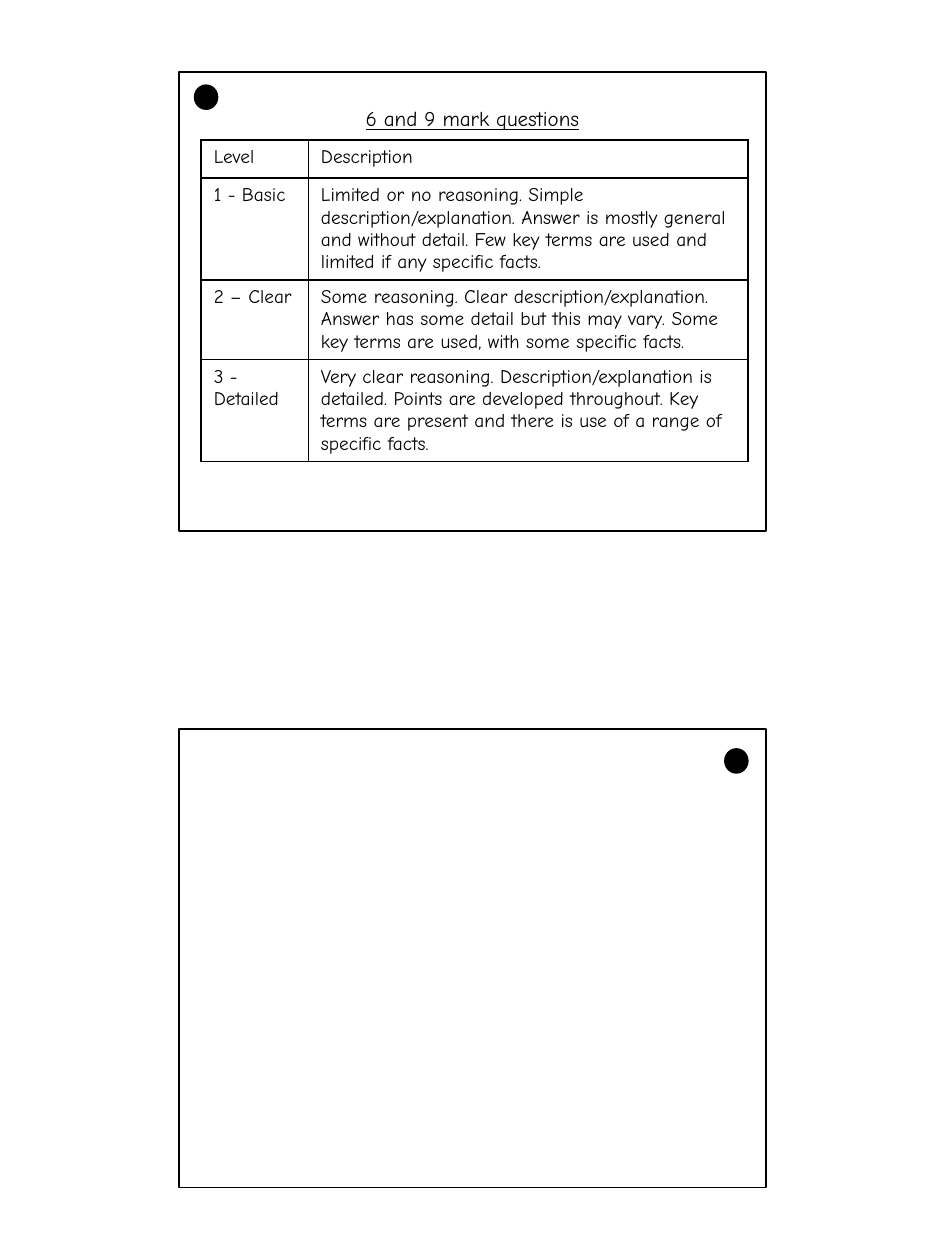
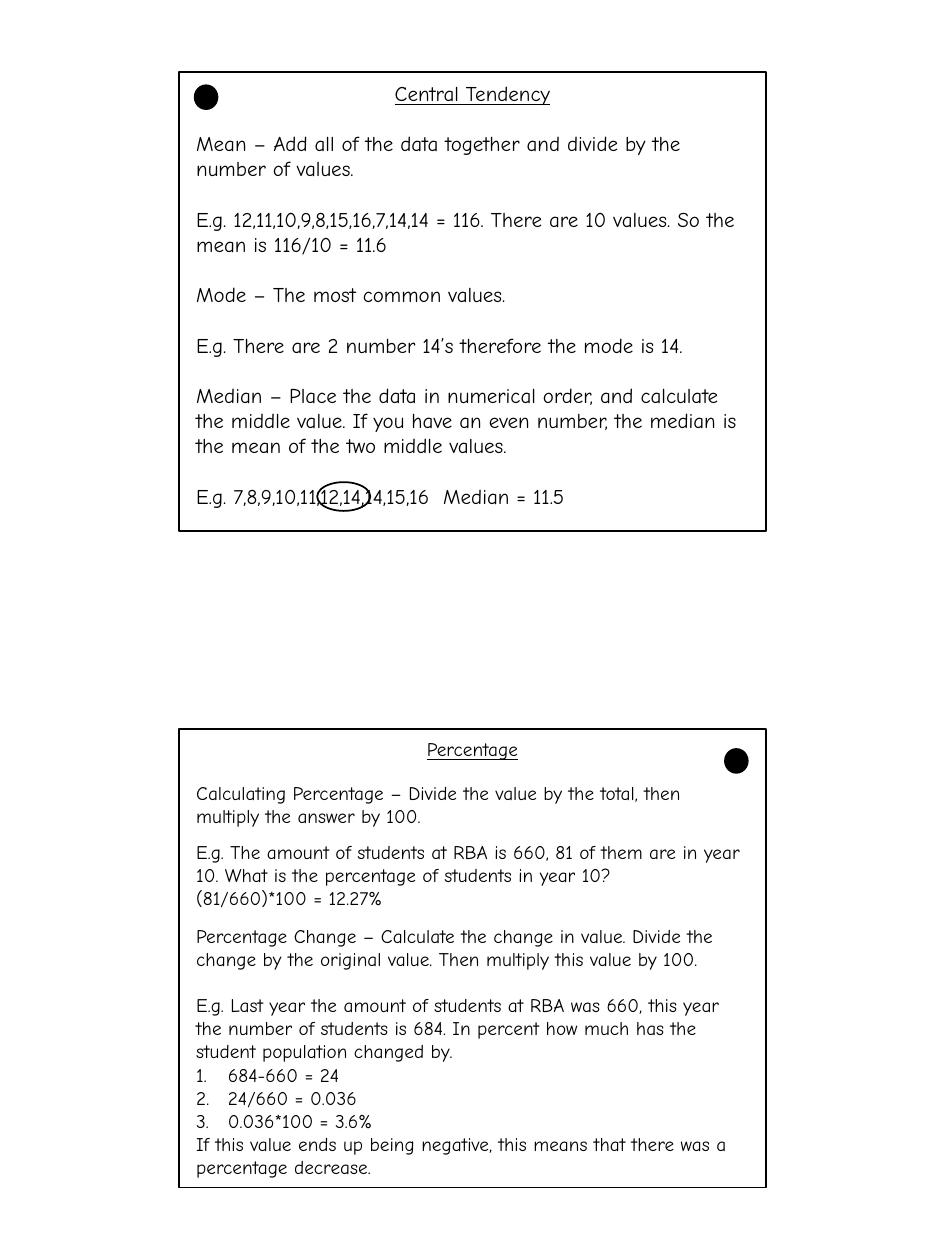
from collections import namedtuple
from dataclasses import dataclass

from lxml.etree import SubElement
from pptx import Presentation
from pptx.dml.color import RGBColor
from pptx.enum.shapes import MSO_SHAPE
from pptx.enum.text import MSO_ANCHOR, MSO_AUTO_SIZE, PP_ALIGN
from pptx.oxml.ns import qn
from pptx.util import Cm, Pt

Box = namedtuple("Box", "left top width height")
Item = namedtuple("Item", "text gap numbered", defaults=(0, False))


@dataclass(frozen=True)
class Theme:
    font: str = "Comic Neue"
    ink: RGBColor = RGBColor(0, 0, 0)
    paper: RGBColor = RGBColor(255, 255, 255)
    line: float = 1
    large: float = 12
    medium: float = 11
    leading: float = 1.2


THEME = Theme()

# Lengths in centimetres
PAGE_WIDTH, PAGE_HEIGHT = 19.05, 25.4
CARD_WIDTH, CARD_HEIGHT = 11.84, 9.25
CARD_LEFT = (PAGE_WIDTH - CARD_WIDTH) / 2
UPPER = Box(CARD_LEFT, 1.45, CARD_WIDTH, CARD_HEIGHT)
LOWER = Box(CARD_LEFT, 14.69, CARD_WIDTH, CARD_HEIGHT)
INSET_X, INSET_Y = 0.35, 0.18
HEADING_HEIGHT = 0.5

LEVELS = [
    ("Level", "Description"),
    ("1 - Basic", "Limited or no reasoning. Simple description/explanation. "
     "Answer is mostly general and without detail. Few key terms are used "
     "and limited if any specific facts."),
    ("2 – Clear", "Some reasoning. Clear description/explanation. Answer has "
     "some detail but this may vary. Some key terms are used, with some "
     "specific facts."),
    ("3 - Detailed", "Very clear reasoning. Description/explanation is "
     "detailed. Points are developed throughout. Key terms are present and "
     "there is use of a range of specific facts."),
]
LEVEL_COLUMNS = (2.16, 8.86)
LEVEL_ROWS = (0.77, 2.05, 1.61, 2.05)

AVERAGES = [
    "Mean – Add all of the data together and divide by the number of values.",
    "E.g. 12,11,10,9,8,15,16,7,14,14 = 116. There are 10 values. So the mean "
    "is 116/10 = 11.6",
    "Mode – The most common values.",
    "E.g. There are 2 number 14’s therefore the mode is 14.",
    "Median – Place the data in numerical order, and calculate the middle "
    "value. If you have an even number, the median is the mean of the two "
    "middle values.",
    "E.g. 7,8,9,10,11,12,14,14,15,16  Median = 11.5",
]

PERCENTAGES = [
    Item("Calculating Percentage – Divide the value by the total, then "
         "multiply the answer by 100."),
    Item("E.g. The amount of students at RBA is 660, 81 of them are in year "
         "10. What is the percentage of students in year 10?", 7.2),
    Item("(81/660)*100 = 12.27%"),
    Item("Percentage Change – Calculate the change in value. Divide the "
         "change by the original value. Then multiply this value by 100.", 8.4),
    Item("E.g. Last year the amount of students at RBA was 660, this year the "
         "number of students is 684. In percent how much has the student "
         "population changed by.", 13.2),
    Item("684-660 = 24", numbered=True),
    Item("24/660 = 0.036", numbered=True),
    Item("0.036*100 = 3.6%", numbered=True),
    Item("If this value ends up being negative, this means that there was a "
         "percentage decrease."),
]


def in_cm(box):
    return [Cm(length) for length in box]


def within(box, left, top, width, height):
    return Box(box.left + left, box.top + top, width, height)


def add_span(para, text, size, underline=False):
    span = para.add_run()
    span.text = text
    font = span.font
    font.name, font.size = THEME.font, Pt(size)
    font.bold, font.underline = False, underline
    font.color.rgb = THEME.ink


def add_outline(page, kind, box, fill=None):
    shape = page.shapes.add_shape(kind, *in_cm(box))
    shape.shadow.inherit = False
    if fill is None:
        shape.fill.background()
    else:
        shape.fill.solid()
        shape.fill.fore_color.rgb = fill
    shape.line.color.rgb = THEME.ink
    shape.line.width = Pt(THEME.line)
    return shape


def place_text_frame(placeholder, box):
    """Move a placeholder to the box, in front of the cards."""
    placeholder.left, placeholder.top, placeholder.width, placeholder.height = in_cm(box)
    element = placeholder.element
    element.getparent().append(element)
    frame = placeholder.text_frame
    frame.word_wrap = True
    frame.auto_size = MSO_AUTO_SIZE.NONE
    frame.vertical_anchor = MSO_ANCHOR.TOP
    frame.margin_left = frame.margin_right = Cm(INSET_X)
    frame.margin_top = frame.margin_bottom = 0
    return frame


def set_para(para, gap=0, numbered=False):
    para.space_before, para.space_after = Pt(gap), Pt(0)
    props = para._p.get_or_add_pPr()
    hang = Cm(0.64) if numbered else 0
    props.set("marL", str(hang))
    props.set("indent", str(-hang))
    if numbered:
        SubElement(props, qn("a:buFont"), typeface="+mj-lt")
        SubElement(props, qn("a:buAutoNum"), type="arabicPeriod")
    else:
        SubElement(props, qn("a:buNone"))


def fill_heading(placeholder, card, text, size, top=INSET_Y):
    box = within(card, 0, top, card.width, HEADING_HEIGHT)
    para = place_text_frame(placeholder, box).paragraphs[0]
    para.alignment = PP_ALIGN.CENTER
    set_para(para)
    add_span(para, text, size, underline=True)


def fill_body(placeholder, card, items, size, top):
    box = within(card, 0, top, card.width, card.height - top)
    frame = place_text_frame(placeholder, box)
    for index, item in enumerate(items):
        para = frame.add_paragraph() if index else frame.paragraphs[0]
        para.alignment = PP_ALIGN.LEFT
        set_para(para, item.gap, item.numbered)
        add_span(para, item.text, size)


def add_cards(page):
    """Two bordered cards, each with a punch hole."""
    for card, left, top in ((UPPER, 0.32, 0.27), (LOWER, 11.01, 0.41)):
        add_outline(page, MSO_SHAPE.RECTANGLE, card, THEME.paper)
        hole = within(card, left, top, 0.46, 0.48)
        add_outline(page, MSO_SHAPE.OVAL, hole, THEME.ink)


def set_borders(cell):
    props = cell._tc.get_or_add_tcPr()
    for position, side in enumerate(("lnL", "lnR", "lnT", "lnB")):
        line = SubElement(props, qn(f"a:{side}"), w=str(Pt(THEME.line)))
        fill = SubElement(line, qn("a:solidFill"))
        SubElement(fill, qn("a:srgbClr"), val=str(THEME.ink))
        props.insert(position, line)


def add_level_table(page, card):
    box = within(card, 0.45, 1.37, sum(LEVEL_COLUMNS), sum(LEVEL_ROWS))
    table = page.shapes.add_table(
        len(LEVELS), len(LEVEL_COLUMNS), *in_cm(box)).table
    table.first_row = table.horz_banding = False
    for column, width in zip(table.columns, LEVEL_COLUMNS):
        column.width = Cm(width)
    for row, height, texts in zip(table.rows, LEVEL_ROWS, LEVELS):
        row.height = Cm(height)
        for cell, text in zip(row.cells, texts):
            cell.fill.solid()
            cell.fill.fore_color.rgb = THEME.paper
            set_borders(cell)
            add_span(cell.text_frame.paragraphs[0], text, THEME.medium)


def build_levels_page(deck):
    page = deck.slides.add_slide(deck.slide_layouts.get_by_name("Title Only"))
    add_cards(page)
    fill_heading(page.shapes.title, UPPER, "6 and 9 mark questions",
                 THEME.large, INSET_Y + HEADING_HEIGHT)
    add_level_table(page, UPPER)


def build_maths_page(deck):
    page = deck.slides.add_slide(deck.slide_layouts.get_by_name("Comparison"))
    slots = {slot.placeholder_format.idx: slot for slot in page.placeholders}
    add_cards(page)

    # Upper card: averages, with a ring around the middle values
    blank_line = THEME.large * THEME.leading
    averages = [Item(text, blank_line if index else 0)
                for index, text in enumerate(AVERAGES)]
    fill_heading(slots[0], UPPER, "Central Tendency", THEME.large)
    fill_body(slots[2], UPPER, averages, THEME.large, INSET_Y + 2 * HEADING_HEIGHT)
    add_outline(page, MSO_SHAPE.OVAL, within(UPPER, 2.79, 8.27, 1.07, 0.58))

    # Lower card: percentages
    fill_heading(slots[3], LOWER, "Percentage", THEME.medium)
    fill_body(slots[4], LOWER, PERCENTAGES, THEME.medium, 1.06)

    # Spare heading slot
    spare = slots[1].element
    spare.getparent().remove(spare)


def main():
    deck = Presentation()
    deck.slide_width, deck.slide_height = Cm(PAGE_WIDTH), Cm(PAGE_HEIGHT)
    build_levels_page(deck)
    build_maths_page(deck)
    deck.save("out.pptx")


if __name__ == "__main__":
    main()
